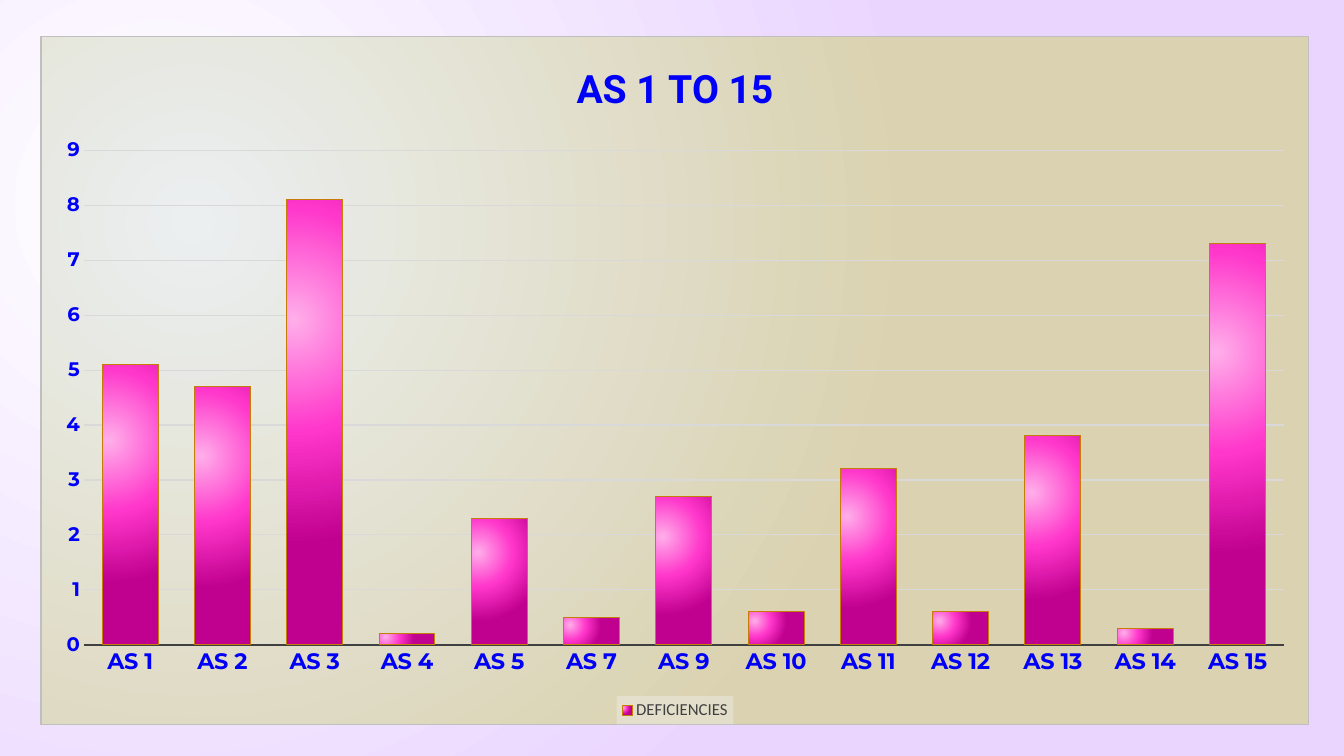
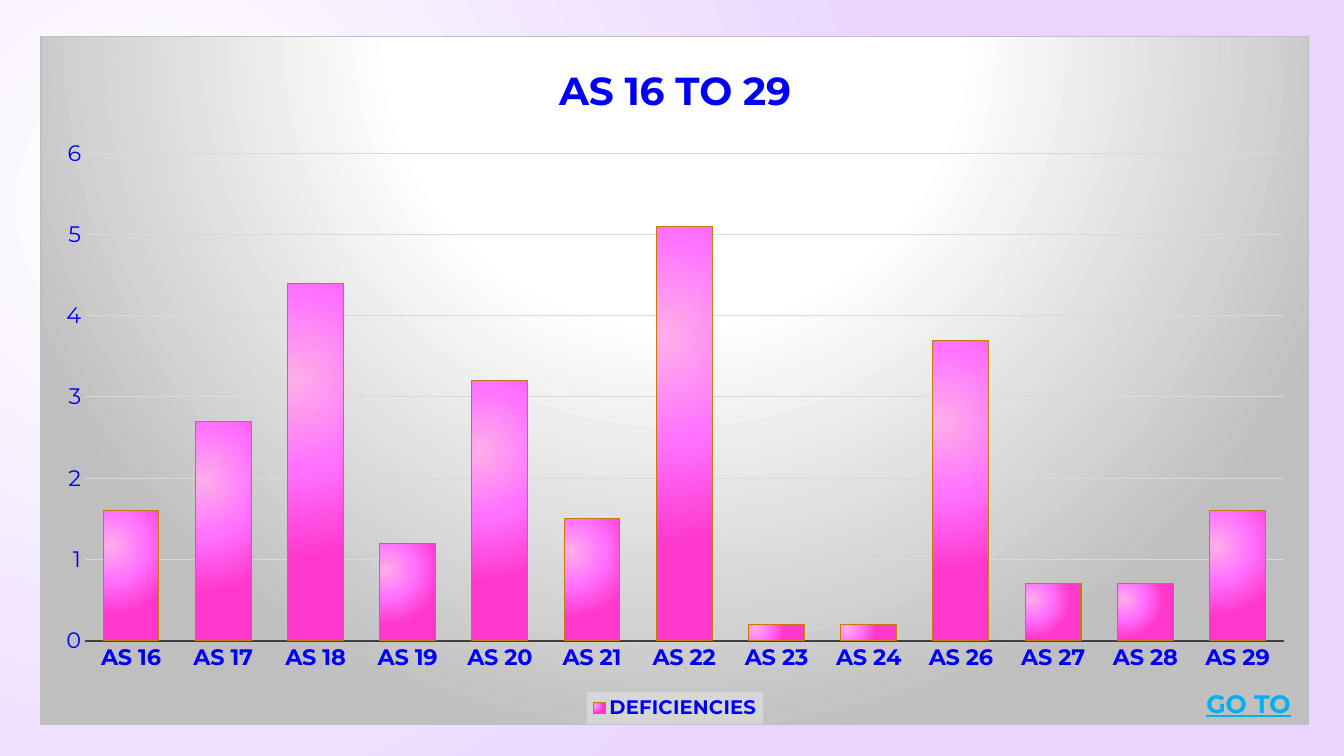
"""Build two slides with column charts of deficiencies per standard."""
from dataclasses import dataclass

from pptx import Presentation
from pptx.chart.chart import Chart
from pptx.chart.data import CategoryChartData
from pptx.dml.color import RGBColor
from pptx.enum.chart import XL_CHART_TYPE as ChartType
from pptx.enum.chart import XL_LEGEND_POSITION as LegendPosition
from pptx.enum.chart import XL_TICK_MARK as TickMark
from pptx.oxml import parse_xml
from pptx.oxml.ns import nsdecls
from pptx.slide import Slide, SlideMaster
from pptx.text.text import Font
from pptx.util import Cm, Pt

WHITE = RGBColor(0xFF, 0xFF, 0xFF)
BLACK = RGBColor(0x00, 0x00, 0x00)
BLUE = RGBColor(0x00, 0x00, 0xF6)
SKY = RGBColor(0x00, 0xB0, 0xF0)
LILAC = RGBColor(0xEA, 0xD5, 0xFF)
MIST = RGBColor(0xEB, 0xEF, 0xF0)
SAND = RGBColor(0xDA, 0xD2, 0xB0)
PALE_PINK = RGBColor(0xFF, 0xAF, 0xEA)
ORCHID = RGBColor(0xFF, 0x71, 0xFF)
PINK = RGBColor(0xFF, 0x37, 0xCB)
MAGENTA = RGBColor(0xC0, 0x00, 0x8E)
OCHRE = RGBColor(0xC6, 0x7D, 0x08)
DARK_GREY = RGBColor(0x40, 0x40, 0x40)
GREY = RGBColor(0xBF, 0xBF, 0xBF)
GRID_GREY = RGBColor(0xD9, 0xD9, 0xD9)
LEGEND_GREY = RGBColor(0xF2, 0xF2, 0xF2)

CORNER_GLOW = (50, 55, 125, 100)
TOP_GLOW = (50, -80, 50, 180)


@dataclass(frozen=True)
class Gradient:
    """Circular gradient: stops in percent and the focus rectangle."""

    stops: tuple[tuple[int, RGBColor], ...]
    focus: tuple[int, int, int, int] = CORNER_GLOW

    def xml(self) -> str:
        """Return the gradient as a DrawingML fill."""
        stops = "".join(
            f'<a:gs pos="{position * 1000}"><a:srgbClr val="{color}"/></a:gs>'
            for position, color in self.stops
        )
        sides = " ".join(f'{side}="{value * 1000}"' for side, value in zip("ltrb", self.focus))
        return (
            f'<a:gradFill {nsdecls("a")} rotWithShape="1"><a:gsLst>{stops}</a:gsLst>'
            f'<a:path path="circle"><a:fillToRect {sides}/></a:path></a:gradFill>'
        )


@dataclass(frozen=True)
class TextStyle:
    """Font, size, colour and weight of a text."""

    size: int
    color: RGBColor = BLUE
    name: str = "Montserrat"
    bold: bool = True

    def apply(self, font: Font) -> None:
        """Set the style on a font."""
        font.name = self.name
        font.size = Pt(self.size)
        font.bold = self.bold
        font.color.rgb = self.color


@dataclass(frozen=True)
class ChartPage:
    """Data and look of one chart slide."""

    title: str
    values: dict[int, float]
    maximum: int
    area: Gradient
    columns: Gradient
    title_style: TextStyle
    value_style: TextStyle
    legend_style: TextStyle


BACKGROUND = Gradient(((0, WHITE), (100, LILAC)))
CATEGORY_STYLE = TextStyle(16)
LINK_STYLE = TextStyle(18, SKY)

PAGES = (
    ChartPage(
        title="AS 1 TO 15",
        values={1: 5.1, 2: 4.7, 3: 8.1, 4: 0.2, 5: 2.3, 7: 0.5, 9: 2.7,
                10: 0.6, 11: 3.2, 12: 0.6, 13: 3.8, 14: 0.3, 15: 7.3},
        maximum=9,
        area=Gradient(((0, MIST), (100, SAND))),
        columns=Gradient(((0, PALE_PINK), (50, PINK), (100, MAGENTA))),
        title_style=TextStyle(28, name="Roboto"),
        value_style=TextStyle(14),
        legend_style=TextStyle(12, DARK_GREY, "Calibri", False),
    ),
    ChartPage(
        title="AS 16 TO 29",
        values={16: 1.6, 17: 2.7, 18: 4.4, 19: 1.2, 20: 3.2, 21: 1.5, 22: 5.1,
                23: 0.2, 24: 0.2, 26: 3.7, 27: 0.7, 28: 0.7, 29: 1.6},
        maximum=6,
        area=Gradient(((0, WHITE), (39, WHITE), (100, GREY)), TOP_GLOW),
        columns=Gradient(((0, PALE_PINK), (50, ORCHID), (100, PINK))),
        title_style=TextStyle(28),
        value_style=TextStyle(16, bold=False),
        legend_style=TextStyle(14),
    ),
)


def chart_properties(content: str):
    """Return a chart spPr element holding the given fill and line."""
    return parse_xml(f'<c:spPr {nsdecls("c", "a")}>{content}</c:spPr>')


def set_background(master: SlideMaster) -> None:
    """Give the master the shared gradient background."""
    master.background.fill.solid()
    solid_fill = master.element.xpath(".//p:bgPr/a:solidFill")[0]
    solid_fill.getparent().replace(solid_fill, parse_xml(BACKGROUND.xml()))


def format_axes(chart: Chart, page: ChartPage) -> None:
    """Format both axes and the grid."""
    for axis, style in ((chart.category_axis, CATEGORY_STYLE), (chart.value_axis, page.value_style)):
        axis.major_tick_mark = axis.minor_tick_mark = TickMark.NONE
        style.apply(axis.tick_labels.font)
    category_line = chart.category_axis.format.line
    category_line.color.rgb = DARK_GREY
    category_line.width = Pt(1.5)
    value_axis = chart.value_axis
    value_axis.minimum_scale = 0
    value_axis.maximum_scale = page.maximum
    value_axis.major_unit = 1
    value_axis.format.line.fill.background()
    grid_line = value_axis.major_gridlines.format.line
    grid_line.color.rgb = GRID_GREY
    grid_line.width = Pt(0.75)


def format_columns(chart: Chart, gradient: Gradient) -> None:
    """Fill and outline the columns."""
    plot = chart.plots[0]
    plot.gap_width = 65
    plot.vary_by_categories = False
    series = plot.series[0]
    series.format.fill.solid()
    series.format.line.color.rgb = OCHRE
    series.format.line.width = Pt(0.75)
    solid_fill = chart.element.xpath(".//c:ser/c:spPr/a:solidFill")[0]
    solid_fill.getparent().replace(solid_fill, parse_xml(gradient.xml()))


def format_legend(chart: Chart, style: TextStyle) -> None:
    """Place the legend below on a translucent plate."""
    chart.has_legend = True
    chart.legend.position = LegendPosition.BOTTOM
    chart.legend.include_in_layout = False
    style.apply(chart.legend.font)
    plate = chart_properties(
        f'<a:solidFill><a:srgbClr val="{LEGEND_GREY}"><a:alpha val="39000"/></a:srgbClr></a:solidFill>'
    )
    chart.element.xpath(".//c:legend/c:txPr")[0].addprevious(plate)


def add_column_chart(slide: Slide, page: ChartPage) -> None:
    """Add the chart of one page."""
    data = CategoryChartData()
    data.categories = [f"AS {number}" for number in page.values]
    data.add_series("DEFICIENCIES", list(page.values.values()))
    chart = slide.shapes.add_chart(
        ChartType.COLUMN_CLUSTERED, Cm(1.02), Cm(0.91), Cm(31.98), Cm(17.35), data
    ).chart
    TextStyle(10, BLACK, "Calibri", False).apply(chart.font)
    chart.has_title = True
    run = chart.chart_title.text_frame.paragraphs[0].add_run()
    run.text = page.title
    page.title_style.apply(run.font)
    chart.chart_title.include_in_layout = False
    format_axes(chart, page)
    format_columns(chart, page.columns)
    format_legend(chart, page.legend_style)
    border = f'<a:ln w="{Pt(0.75)}"><a:solidFill><a:srgbClr val="{GREY}"/></a:solidFill></a:ln>'
    chart.element.xpath("c:chart")[0].addnext(chart_properties(page.area.xml() + border))


def add_go_to(slide: Slide) -> None:
    """Add the underlined label in the lower right corner."""
    label = slide.shapes.add_textbox(Cm(30.15), Cm(17.22), Cm(2.82), Cm(1.02))
    label.text_frame.word_wrap = True
    run = label.text_frame.paragraphs[0].add_run()
    run.text = "GO TO"
    LINK_STYLE.apply(run.font)
    run.font.underline = True


def main() -> None:
    """Build and save the presentation."""
    presentation = Presentation()
    presentation.slide_width = Cm(33.87)
    presentation.slide_height = Cm(19.05)
    set_background(presentation.slide_master)
    blank_layout = presentation.slide_layouts[6]
    for page in PAGES:
        slide = presentation.slides.add_slide(blank_layout)
        add_column_chart(slide, page)
    add_go_to(slide)
    presentation.save("out.pptx")


if __name__ == "__main__":
    main()
